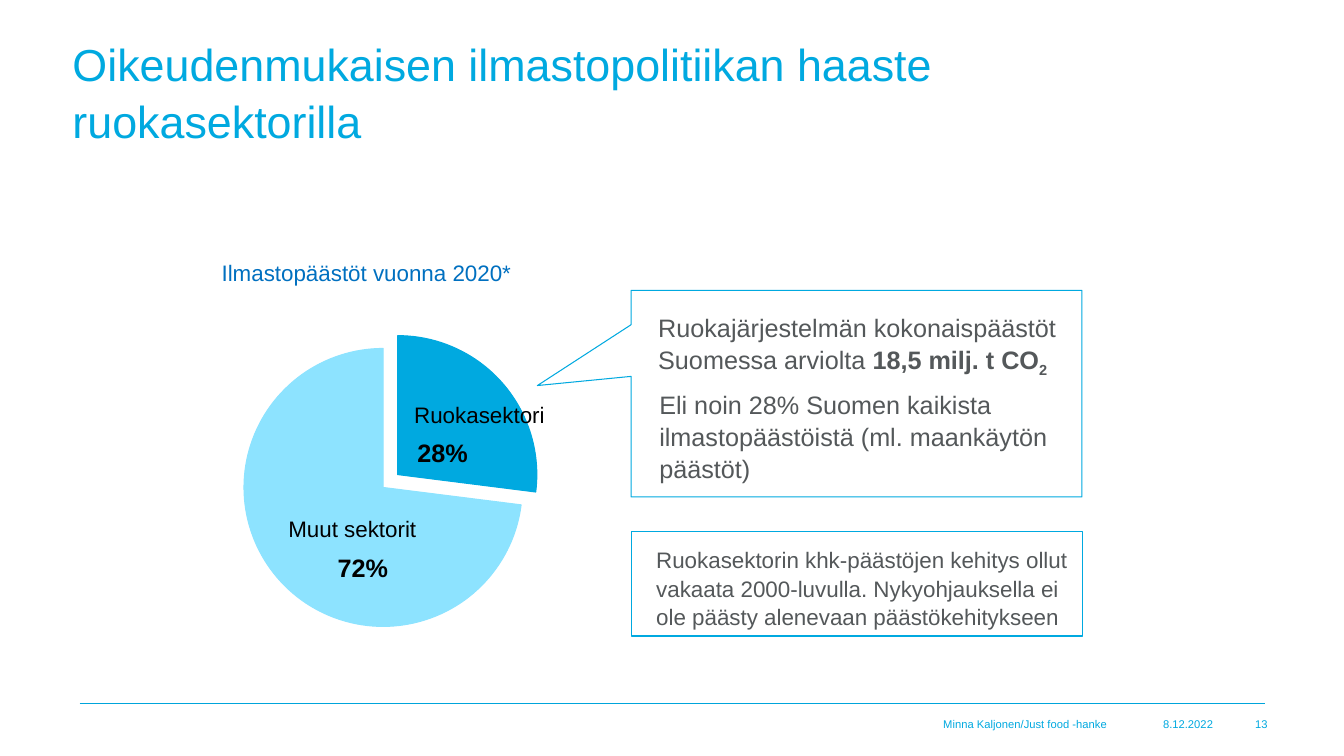
from dataclasses import dataclass
from lxml.etree import SubElement
from pptx import Presentation
from pptx.chart.data import CategoryChartData
from pptx.dml.color import RGBColor
from pptx.enum.chart import XL_CHART_TYPE
from pptx.enum.shapes import MSO_CONNECTOR, MSO_SHAPE
from pptx.enum.text import MSO_ANCHOR, PP_ALIGN
from pptx.oxml import parse_xml
from pptx.oxml.ns import nsdecls, qn
from pptx.util import Inches, Pt


@dataclass(frozen=True)
class Theme:
    font: str = "Arial"
    cyan: str = "00A9E0"
    pale: str = "8DE3FF"
    rule: str = "00A5DB"
    blue: str = "0070C0"
    grey: str = "54585A"
    black: str = "000000"
    title: int = 32
    large: int = 18
    text: int = 16
    axis: int = 10
    foot: int = 8
    pitch: float = 1.05


LOOK = Theme()


def color(code):
    return RGBColor.from_string(code)


def write(slide, box, lines, size, tint, align=PP_ALIGN.LEFT,
          anchor=MSO_ANCHOR.TOP, wrap=True):
    frame = slide.shapes.add_textbox(*map(Inches, box)).text_frame
    frame.word_wrap = wrap
    frame.vertical_anchor = anchor
    for i, runs in enumerate(lines):
        para = frame.paragraphs[0] if i == 0 else frame.add_paragraph()
        para.alignment = align
        para.line_spacing = LOOK.pitch
        for text, bold, base in runs:
            run = para.add_run()
            run.text = text
            run.font.name = LOOK.font
            run.font.size = Pt(size)
            run.font.bold = bold
            run.font.color.rgb = color(tint)
            if base:
                run.font._element.set("baseline", str(base * 1000))


def plain(text, bold=False):
    return [[(text, bold, 0)]]


def frame_box(slide, kind, box):
    shape = slide.shapes.add_shape(kind, *map(Inches, box))
    shape.shadow.inherit = False
    shape.fill.background()
    shape.line.color.rgb = color(LOOK.cyan)
    shape.line.width = Pt(0.75)
    return shape


def add_pie(slide, box):
    x, y, w, h = box
    data = CategoryChartData()
    data.categories = ["1", "2", "3"]
    data.add_series("Series 1", (11, 16, 73))
    chart = slide.shapes.add_chart(
        XL_CHART_TYPE.PIE, *map(Inches, box), data).chart
    chart.has_legend = False
    chart.has_title = False
    chart.font.name = LOOK.font
    chart.font.size = Pt(LOOK.axis)
    chart.font.color.rgb = color(LOOK.black)
    plot = chart.plots[0]
    plot.vary_by_categories = False
    series = plot.series[0]
    series.format.line.color.rgb = color(LOOK.pale)
    series.format.line.width = Pt(0.75)
    for i, tint in enumerate((LOOK.cyan, LOOK.cyan, LOOK.pale)):
        part = series.points[i].format
        part.fill.solid()
        part.fill.fore_color.rgb = color(tint)
        part.line.color.rgb = color(tint)
        part.line.width = Pt(0.75)
    point = series._element.findall(qn("c:dPt"))[2]
    point.find(qn("c:spPr")).addprevious(
        parse_xml(f'<c:explosion {nsdecls("c")} val="14"/>'))

    side = 2.76
    area = chart._chartSpace.chart.plotArea
    for old in area.findall(qn("c:layout")):
        area.remove(old)
    layout = parse_xml(f'<c:layout {nsdecls("c")}/>')
    area.insert(0, layout)
    manual = SubElement(layout, qn("c:manualLayout"))
    for tag, val in (("layoutTarget", "inner"), ("xMode", "edge"),
                     ("yMode", "edge"), ("x", (1 - side / w) / 2),
                     ("y", (1 - side / h) / 2), ("w", side / w),
                     ("h", side / h)):
        SubElement(manual, qn(f"c:{tag}")).set("val", str(val))


def add_share(slide, box):
    x, y, w, h = box
    write(slide, (x + 0.39, y, 3.43, 0.37),
          plain("Ilmastopäästöt vuonna 2020*"), LOOK.text, LOOK.blue)
    add_pie(slide, (x, y + 0.69, w, h - 0.69))
    for name, share, left, top, width, inset, drop in (
            ("Ruokasektori", "28%", 2.05, 1.41, 1.99, 0.28, 0.35),
            ("Muut sektorit", "72%", 0.7, 2.54, 2.17, 0.84, 0.37)):
        write(slide, (x + left, y + top, width, 0.37), plain(name),
              LOOK.text, LOOK.black, PP_ALIGN.CENTER)
        write(slide, (x + left + inset, y + top + drop, 0.71, 0.4),
              plain(share, True), LOOK.large, LOOK.black, wrap=False)


def add_call(slide, box):
    x, y, w, h = box
    shape = frame_box(slide, MSO_SHAPE.RECTANGULAR_CALLOUT, box)
    shape.adjustments[0] = -0.708
    shape.adjustments[1] = -0.039
    write(slide, (x + 0.17, y + 0.15, w - 0.24, 0.71), [
        [("Ruokajärjestelmän kokonaispäästöt", False, 0)],
        [("Suomessa arviolta ", False, 0), ("18,5 milj. t CO", True, 0),
         ("2", True, -25)]], LOOK.large, LOOK.grey)
    write(slide, (x + 0.18, y + 0.92, w - 0.38, 1.01), plain(
        "Eli noin 28% Suomen kaikista ilmastopäästöistä "
        "(ml. maankäytön päästöt)"), LOOK.large, LOOK.grey)


def add_note(slide, box):
    x, y, w, h = box
    frame_box(slide, MSO_SHAPE.RECTANGLE, box)
    write(slide, (x + 0.15, y + 0.09, w - 0.16, 0.91), plain(
        "Ruokasektorin khk-päästöjen kehitys ollut vakaata 2000-luvulla. "
        "Nykyohjauksella ei ole päästy alenevaan päästökehitykseen"),
        LOOK.text, LOOK.grey)


def add_title(slide, box):
    write(slide, box,
          plain("Oikeudenmukaisen ilmastopolitiikan haaste ruokasektorilla"),
          LOOK.title, LOOK.cyan, anchor=MSO_ANCHOR.BOTTOM)


def add_foot(slide, box):
    x, y, w, h = box
    rule = slide.shapes.add_connector(
        MSO_CONNECTOR.STRAIGHT, Inches(x + 0.11), Inches(y),
        Inches(x + w - 0.12), Inches(y))
    rule.line.color.rgb = color(LOOK.rule)
    rule.line.width = Pt(0.25)
    SubElement(rule._element.spPr, qn("a:effectLst"))
    left = x
    for text, width in (("Minna Kaljonen/Just food -hanke", 10.4),
                        ("8.12.2022", 1.05), ("13", 0.54)):
        write(slide, (left, y + 0.08, width, 0.24), plain(text), LOOK.foot,
              LOOK.cyan, PP_ALIGN.RIGHT, MSO_ANCHOR.MIDDLE)
        left += width


def main():
    deck = Presentation()
    deck.slide_width = Inches(13.33)
    deck.slide_height = Inches(7.5)
    slide = deck.slides.add_slide(deck.slide_layouts[6])
    add_title(slide, (0.62, 0.45, 10.25, 1.06))
    add_share(slide, (1.71, 2.51, 4.47, 3.71))
    add_call(slide, (6.26, 2.88, 4.47, 2.05))
    add_note(slide, (6.26, 5.27, 4.48, 1.04))
    add_foot(slide, (0.68, 6.98, 11.99, 0.32))
    deck.save("out.pptx")


if __name__ == "__main__":
    main()
